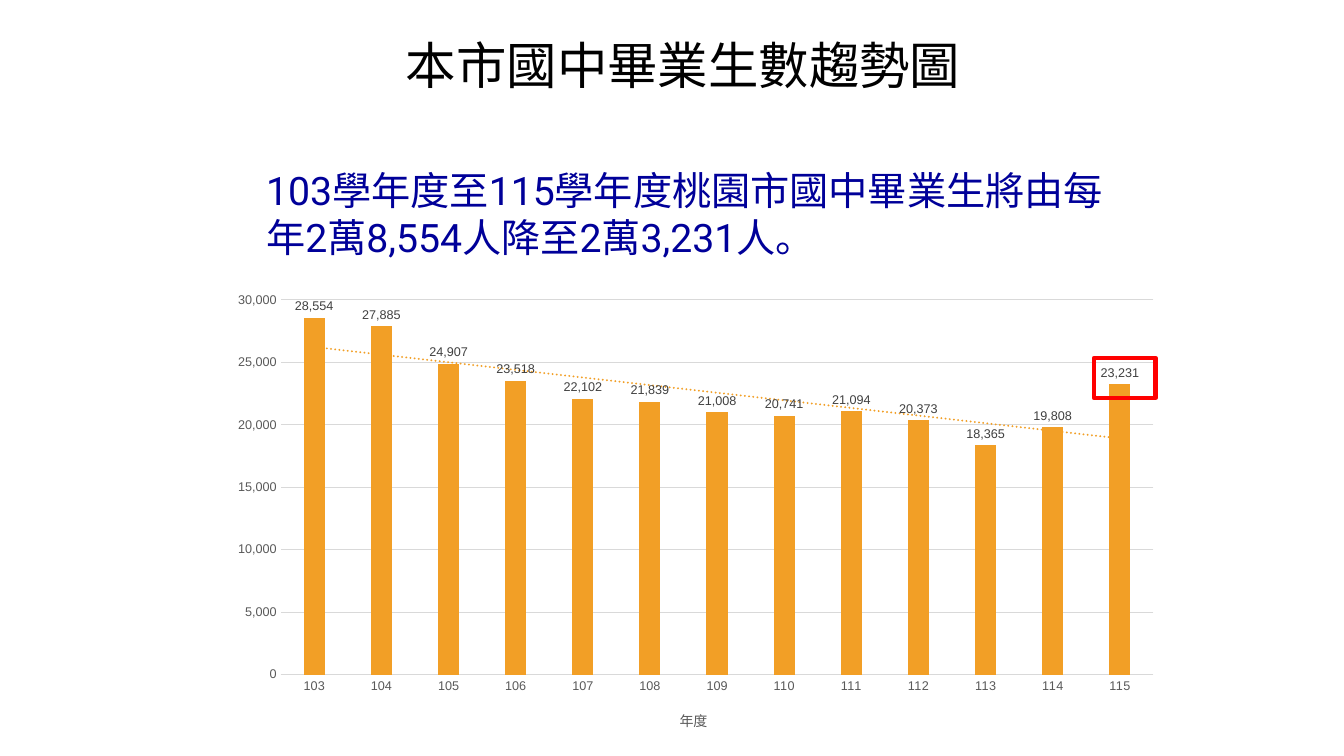
from dataclasses import dataclass
from typing import Any

import pptx
import pptx.chart.data
import pptx.dml.color
import pptx.enum.chart
import pptx.enum.shapes
import pptx.enum.text
import pptx.oxml
import pptx.oxml.ns
import pptx.util

Inches = pptx.util.Inches
Anchor = pptx.enum.text.MSO_ANCHOR
Align = pptx.enum.text.PP_ALIGN


@dataclass(frozen=True)
class Theme:
    text_font: str = "Roboto"
    chart_font: str = "Arial"
    title_size: int = 36
    summary_size: int = 28
    axis_title_size: int = 10
    chart_size: int = 9
    title: str = "000000"
    summary: str = "000099"
    bar: str = "F29F26"
    grid: str = "D9D9D9"
    axis: str = "595959"
    label: str = "404040"
    highlight: str = "FF0000"


@dataclass(frozen=True)
class Area:
    left: float
    top: float
    width: float
    height: float

    def lengths(self) -> list[int]:
        return [Inches(v) for v in (self.left, self.top, self.width, self.height)]


@dataclass(frozen=True)
class TextItem:
    text: str
    area: Area
    size: int
    color: str
    align: Any
    anchor: Any
    side_inset: float
    end_inset: float


THEME = Theme()
TEXTS = [
    TextItem("103學年度至115學年度桃園市國中畢業生將由每年2萬8,554人降至2萬3,231人。",
             Area(2.57, 1.61, 8.74, 1.02), THEME.summary_size, THEME.summary,
             Align.LEFT, Anchor.MIDDLE, 0.07, 0.04),
    TextItem("本市國中畢業生數趨勢圖", Area(3.67, 0.29, 6.21, 0.71),
             THEME.title_size, THEME.title, Align.CENTER, Anchor.TOP, 0.1, 0.05),
]
CHART_AREA = Area(2.18, 2.82, 9.45, 4.6)
HIGHLIGHT_AREA = Area(10.85, 3.55, 0.61, 0.4)
FIRST_YEAR = 103
GRADUATES = [28554, 27885, 24907, 23518, 22102, 21839, 21008,
             20741, 21094, 20373, 18365, 19808, 23231]


def rgb(color: str) -> Any:
    return pptx.dml.color.RGBColor.from_string(color)


def set_all(target: Any, values: dict[str, Any]) -> None:
    for name, value in values.items():
        setattr(target, name, value)


def style_font(font: Any, name: str, size: int, color: str) -> None:
    set_all(font, {"name": name, "size": pptx.util.Pt(size)})
    font.color.rgb = rgb(color)


def style_line(line: Any, color: str, width: float) -> None:
    line.color.rgb = rgb(color)
    line.width = pptx.util.Pt(width)


def add_text(page: Any, item: TextItem) -> None:
    frame = page.shapes.add_textbox(*item.area.lengths()).text_frame
    side, end = Inches(item.side_inset), Inches(item.end_inset)
    set_all(frame, {"word_wrap": True, "vertical_anchor": item.anchor,
                    "margin_left": side, "margin_right": side,
                    "margin_top": end, "margin_bottom": end})
    para = frame.paragraphs[0]
    para.alignment = item.align
    span = para.add_run()
    span.text = item.text
    style_font(span.font, THEME.text_font, item.size, item.color)


def make_element(xml: str) -> Any:
    """Parse a chart fragment whose root takes the namespace declarations."""
    tag, rest = xml.split(">", 1)
    return pptx.oxml.parse_xml(f"{tag} {pptx.oxml.ns.nsdecls('c', 'a')}>{rest}")


def set_layout(parent: Any, position: int, fractions: dict[str, Any]) -> None:
    """Place a chart part by fractions of the chart area."""
    for old in parent.xpath("./c:layout"):
        parent.remove(old)
    values = "".join(f'<c:{key} val="{value}"/>' for key, value in fractions.items())
    parent.insert(position, make_element(
        f"<c:layout><c:manualLayout>{values}</c:manualLayout></c:layout>"))


def add_trend(series: Any) -> None:
    trend = make_element(
        '<c:trendline><c:spPr><a:ln w="19050" cap="rnd"><a:solidFill>'
        f'<a:srgbClr val="{THEME.bar}"/></a:solidFill><a:prstDash val="sysDot"/>'
        '</a:ln></c:spPr><c:trendlineType val="linear"/><c:dispRSqr val="0"/>'
        '<c:dispEq val="0"/></c:trendline>')
    series._element.xpath("./c:cat")[0].addprevious(trend)


def add_graduate_chart(page: Any) -> None:
    kinds = pptx.enum.chart
    data = pptx.chart.data.CategoryChartData(number_format="#,##0")
    data.categories = [str(FIRST_YEAR + i) for i in range(len(GRADUATES))]
    data.add_series("Series 1", GRADUATES)
    chart = page.shapes.add_chart(kinds.XL_CHART_TYPE.COLUMN_CLUSTERED,
                                  *CHART_AREA.lengths(), data).chart
    set_all(chart, {"has_legend": False, "has_title": False})
    style_font(chart.font, THEME.chart_font, THEME.axis_title_size, THEME.title)

    # Columns, value labels and trend line
    plot = chart.plots[0]
    set_all(plot, {"gap_width": 219, "overlap": -27, "vary_by_categories": False})
    series = plot.series[0]
    series.format.fill.solid()
    series.format.fill.fore_color.rgb = rgb(THEME.bar)
    labels = series.data_labels
    set_all(labels, {"show_value": True, "number_format": "#,##0",
                     "number_format_is_linked": False,
                     "position": kinds.XL_LABEL_POSITION.OUTSIDE_END})
    style_font(labels.font, THEME.chart_font, THEME.chart_size, THEME.label)
    add_trend(series)

    # Axes
    years, counts = chart.category_axis, chart.value_axis
    for axis in (years, counts):
        set_all(axis, {"major_tick_mark": kinds.XL_TICK_MARK.NONE,
                       "minor_tick_mark": kinds.XL_TICK_MARK.NONE})
        style_font(axis.tick_labels.font, THEME.chart_font, THEME.chart_size, THEME.axis)
    style_line(years.format.line, THEME.grid, 0.75)
    set_all(counts, {"minimum_scale": 0, "maximum_scale": 30000, "major_unit": 5000,
                     "has_major_gridlines": True})
    set_all(counts.tick_labels, {"number_format": "#,##0",
                                 "number_format_is_linked": False})
    counts.format.line.fill.background()
    style_line(counts.major_gridlines.format.line, THEME.grid, 0.75)

    # Axis title and plot placement
    span = years.axis_title.text_frame.paragraphs[0].add_run()
    span.text = "年度"
    style_font(span.font, THEME.chart_font, THEME.axis_title_size, THEME.axis)
    span.font.bold = False
    set_layout(chart.element.xpath(".//c:catAx/c:title")[0], 1,
               {"xMode": "edge", "yMode": "edge", "x": 0.48, "y": 0.91})
    set_layout(chart.element.xpath(".//c:plotArea")[0], 0,
               {"layoutTarget": "inner", "xMode": "edge", "yMode": "edge",
                "x": 0.064, "y": 0.034, "w": 0.916, "h": 0.808})


def add_highlight(page: Any) -> None:
    box = page.shapes.add_shape(pptx.enum.shapes.MSO_SHAPE.RECTANGLE,
                                *HIGHLIGHT_AREA.lengths())
    box.shadow.inherit = False
    box.fill.background()
    style_line(box.line, THEME.highlight, 3)


def main() -> None:
    deck = pptx.Presentation()
    set_all(deck, {"slide_width": Inches(13.33), "slide_height": Inches(7.5)})
    page = deck.slides.add_slide(deck.slide_layouts[6])
    for item in TEXTS:
        add_text(page, item)
    add_graduate_chart(page)
    add_highlight(page)
    deck.save("out.pptx")


if __name__ == "__main__":
    main()
